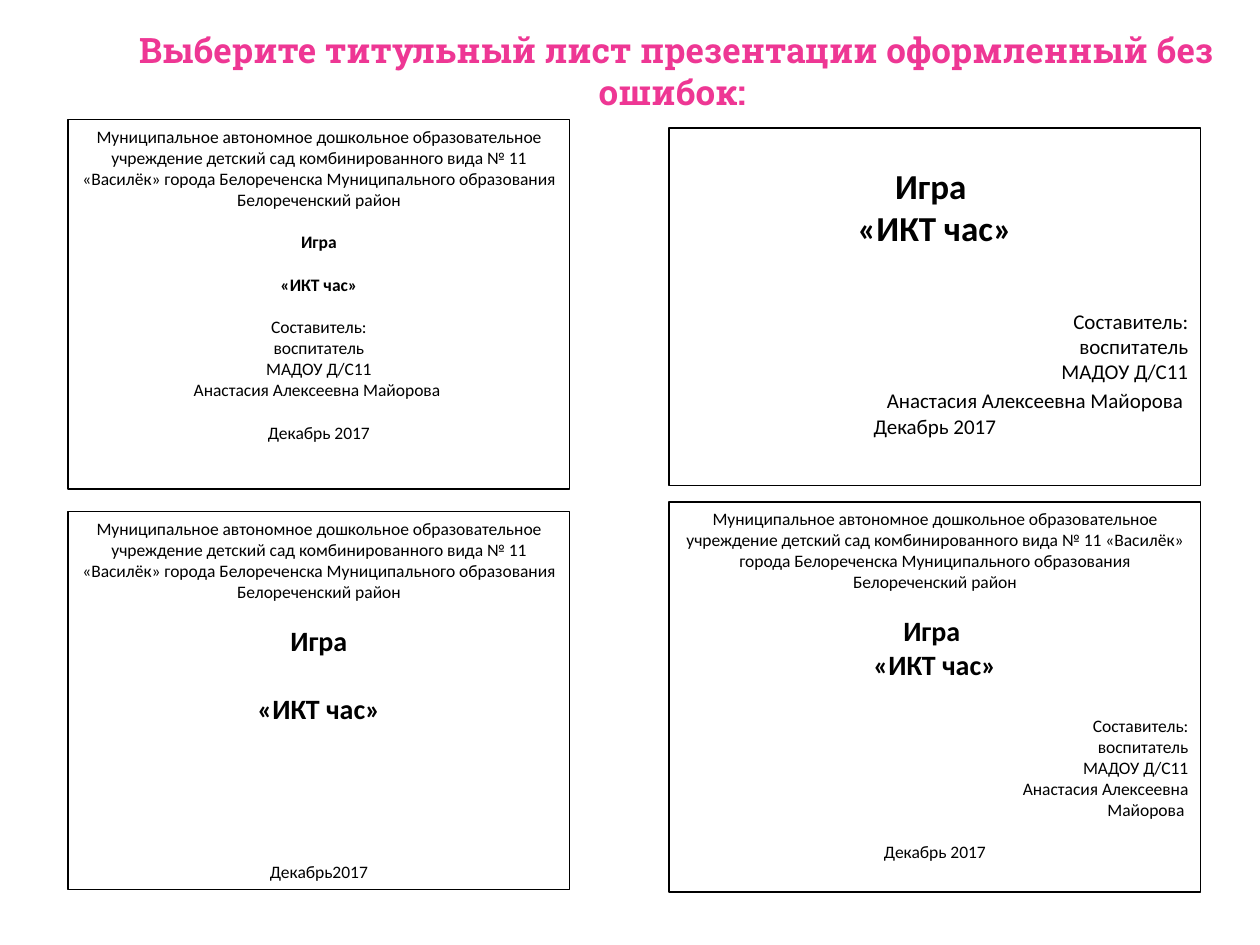
"""Build a quiz slide that asks which of four title pages is laid out correctly."""
from pptx import Presentation
from pptx.dml.color import RGBColor
from pptx.enum.shapes import MSO_SHAPE as Shape
from pptx.enum.text import MSO_ANCHOR as Anchor, PP_ALIGN as Align
from pptx.util import Pt

THEME = {
    "question": {"font": "Roboto Slab", "size": 20, "color": RGBColor(0xEE, 0x37, 0x94)},
    "page": {"font": "Calibri", "color": RGBColor(0, 0, 0), "fill": RGBColor(255, 255, 255)},
    "small": 10, "medium": 12, "spacer": 14, "large": 16, "huge": 20,
    "line_height": 1.22, "border": 0.75, "inset": 3.6,
}
SMALL, MEDIUM, SPACER, LARGE, HUGE = (
    THEME[name] for name in ("small", "medium", "spacer", "large", "huge"))

QUESTION = "Выберите титульный лист презентации оформленный без ошибок: "
QUESTION_AREA = (68.4, 13, 636.5, 55.4)
INSTITUTION = (
    "Муниципальное автономное дошкольное образовательное учреждение детский сад "
    "комбинированного вида № 11 «Василёк» города Белореченска Муниципального образования",
    "Белореченский район",
)
GAME, TOPIC, DATE = "Игра", "«ИКТ час»", "Декабрь 2017"
ROLE = ("Составитель:", "воспитатель", "МАДОУ Д/С11")
AUTHOR = "Анастасия Алексеевна Майорова "
LEFT, RIGHT = (38.9, 286.6), (382.3, 303.8)


def blank(size, count=1):
    return size * THEME["line_height"] * count


def block(lines, size, gap=0, align=Align.CENTER, bold=False):
    return [(line, size, 0 if i else gap, align, bold) for i, line in enumerate(lines)]


PAGES = [
    {"column": LEFT, "top": 68.4, "height": 211, "lead": 0, "blocks": [
        block(INSTITUTION, SMALL),
        block([GAME], SMALL, blank(SMALL), bold=True),
        block([TOPIC], SMALL, blank(SMALL), bold=True),
        block([*ROLE, AUTHOR], SMALL, blank(SMALL)),
        block([DATE], SMALL, blank(SMALL))]},
    {"column": RIGHT, "top": 73.2, "height": 204.5, "lead": blank(SPACER), "blocks": [
        block([GAME + " ", TOPIC], HUGE, bold=True),
        block(ROLE, MEDIUM, blank(SPACER, 2), Align.RIGHT),
        block([AUTHOR], MEDIUM, blank(SPACER - MEDIUM), Align.RIGHT),
        block([DATE], MEDIUM)]},
    {"column": LEFT, "top": 292.4, "height": 216, "lead": 0, "blocks": [
        block(INSTITUTION, SMALL),
        block([GAME], LARGE, blank(SMALL), bold=True),
        block([TOPIC], LARGE, blank(LARGE), bold=True),
        block(["Декабрь2017"], SMALL, blank(LARGE, 4))]},
    {"column": RIGHT, "top": 286.8, "height": 223, "lead": 0, "blocks": [
        block(INSTITUTION, SMALL),
        block([GAME + " ", TOPIC], LARGE, blank(SMALL), bold=True),
        block([*ROLE, "Анастасия Алексеевна", "Майорова "], SMALL, blank(LARGE), Align.RIGHT),
        block([DATE], SMALL, blank(SMALL))]},
]


def write(paragraph, text, size, style, align, bold, gap=0):
    paragraph.text = text
    paragraph.alignment = align
    if gap:
        paragraph.space_before = Pt(round(gap, 2))
    font = paragraph.font
    font.name, font.size, font.bold = style["font"], Pt(size), bold
    font.color.rgb = style["color"]


def add_question(slide):
    frame = slide.shapes.add_textbox(*map(Pt, QUESTION_AREA)).text_frame
    frame.word_wrap = True
    style = THEME["question"]
    write(frame.paragraphs[0], QUESTION, style["size"], style, Align.CENTER, True)


def add_page(slide, page):
    style = THEME["page"]
    left, width = page["column"]
    sheet = slide.shapes.add_shape(
        Shape.RECTANGLE, *map(Pt, (left, page["top"], width, page["height"])))
    sheet.shadow.inherit = False
    sheet.fill.solid()
    sheet.fill.fore_color.rgb = style["fill"]
    sheet.line.color.rgb = style["color"]
    sheet.line.width = Pt(THEME["border"])
    frame = sheet.text_frame
    frame.word_wrap = True
    frame.vertical_anchor = Anchor.TOP
    frame.margin_top = Pt(THEME["inset"] + page["lead"])
    lines = [line for part in page["blocks"] for line in part]
    for i, (text, size, gap, align, bold) in enumerate(lines):
        paragraph = frame.add_paragraph() if i else frame.paragraphs[0]
        write(paragraph, text, size, style, align, bold, gap)


def main():
    deck = Presentation()
    deck.slide_width, deck.slide_height = Pt(720), Pt(540)
    slide = deck.slides.add_slide(deck.slide_layouts[6])
    add_question(slide)
    for page in PAGES:
        add_page(slide, page)
    deck.save("out.pptx")


if __name__ == "__main__":
    main()
